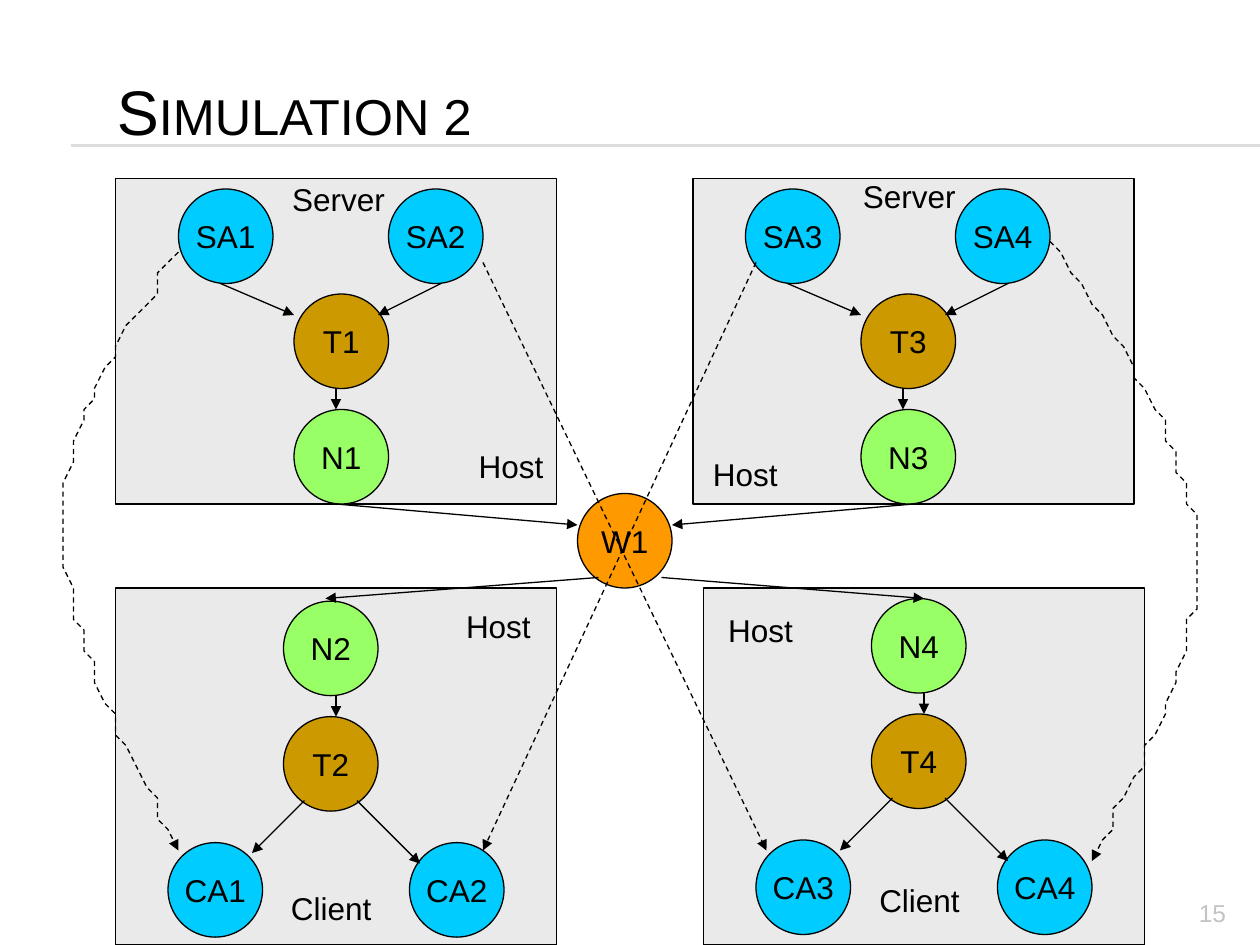
from lxml.etree import SubElement
from pptx import Presentation
from pptx.dml.color import RGBColor
from pptx.enum.dml import MSO_LINE
from pptx.enum.shapes import MSO_CONNECTOR, MSO_SHAPE
from pptx.enum.text import MSO_ANCHOR, PP_ALIGN
from pptx.oxml.ns import qn
from pptx.util import Inches, Pt

FONT = "Arial"
BLACK, PANEL, RULE, PALE = "000000", "EAEAEA", "DDDDDD", "C3C3C3"
BLUE, BROWN, GREEN, ORANGE = "00CCFF", "CC9900", "99FF66", "FF9900"

# Diagram lengths are in grid units, twelve to the inch.
UNIT = 1 / 12
NODE = 9
PANELS = [(11, 56, 42, 34), (66, 17, 42, 31), (67, 56, 42, 34), (11, 17, 42, 31)]

# Each tree is drawn once per offset: (dx, dy, node names).
SERVER = {
    "nodes": [(17, 18, BLUE), (37, 18, BLUE), (28, 28, BROWN), (28, 39, GREEN)],
    "arrows": [(21, 27, 28, 30), (42, 27, 36, 30), (32, 37, 32, 39)],
    "copies": [(0, 0, ["SA1", "SA2", "T1", "N1"]),
               (54, 0, ["SA3", "SA4", "T3", "N3"])],
}
CLIENT = {
    "nodes": [(27, 57, GREEN), (27, 68, BROWN), (16, 80, BLUE), (39, 80, BLUE)],
    "arrows": [(32, 66, 32, 68), (29, 76, 24, 81), (34, 76, 40, 82)],
    "copies": [(0, 0.25, ["N2", "T2", "CA1", "CA2"]),
               (56, 0, ["N4", "T4", "CA3", "CA4"])],
}
HUB = ("W1", 55, 47, ORANGE)
HUB_ARROWS = [(32, 48, 55, 50), (57, 55, 31, 57), (87, 48, 64, 50), (63, 55, 88, 57)]
DASHED_ARROWS = [(46, 25, 73, 81), (72, 25, 46, 81)]
# Bezier chains: a start point, then two controls and an end per segment.
DASHED_CURVES = [
    [(17, 24), (11.5, 32.25), (6, 40.5), (6, 50),
     (6, 59.5), (11.5, 70.25), (17, 81)],
    [(100, 23), (106.67, 32.67), (113.33, 42.17), (114, 52),
     (114.67, 61.83), (109.33, 71.83), (104, 82)],
]
# Labels: text, left, top, width in inches
LABELS = [
    ("Host", 3.6, 4.77, 0.72), ("Host", 3.7, 3.5, 0.72),
    ("Host", 5.56, 3.56, 0.72), ("Host", 5.68, 4.8, 0.72),
    ("Server", 2.22, 1.38, 0.95), ("Server", 6.75, 1.36, 0.95),
    ("Client", 6.88, 6.94, 0.85), ("Client", 2.21, 7.01, 0.85),
]


def rgb(color):
    return RGBColor.from_string(color)


def grid(*lengths):
    return [Inches(length * UNIT) for length in lengths]


def write(shape, text, size=18, color=BLACK, align=PP_ALIGN.LEFT,
          anchor=MSO_ANCHOR.TOP, wrap=False):
    frame = shape.text_frame
    frame.word_wrap = wrap
    frame.vertical_anchor = anchor
    para = frame.paragraphs[0]
    para.text = text
    para.alignment = align
    para.font.name = FONT
    para.font.size = Pt(size)
    para.font.color.rgb = rgb(color)
    return para


def add_text(page, text, left, top, width, height, **style):
    box = page.shapes.add_textbox(*map(Inches, (left, top, width, height)))
    return write(box, text, **style)


def add_solid(page, kind, place, fill):
    shape = page.shapes.add_shape(kind, *grid(*place))
    shape.shadow.inherit = False
    shape.fill.solid()
    shape.fill.fore_color.rgb = rgb(fill)
    shape.line.color.rgb = rgb(BLACK)
    shape.line.width = Pt(0.75)
    return shape


def add_node(page, name, left, top, fill):
    node = add_solid(page, MSO_SHAPE.OVAL, (left, top, NODE, NODE), fill)
    write(node, name, align=PP_ALIGN.CENTER, anchor=MSO_ANCHOR.MIDDLE)


def style_line(shape, color=BLACK, dashed=False, arrow=True):
    shape.line.color.rgb = rgb(color)
    shape.line.width = Pt(0.75)
    if dashed:
        shape.line.dash_style = MSO_LINE.DASH
    if arrow:
        SubElement(shape.line._get_or_add_ln(), qn("a:tailEnd"), type="triangle")


def add_line(page, ends, **style):
    line = page.shapes.add_connector(MSO_CONNECTOR.STRAIGHT, *ends)
    style_line(line, **style)
    SubElement(line._element.spPr, qn("a:effectLst"))


def bezier(points, t):
    """Point at share t of one cubic segment."""
    weights = ((1 - t) ** 3, 3 * t * (1 - t) ** 2, 3 * t ** 2 * (1 - t), t ** 3)
    return tuple(sum(w * p[axis] for w, p in zip(weights, points)) for axis in (0, 1))


def add_curve(page, chain, steps=20):
    points = [bezier(chain[first:first + 4], step / steps)
              for first in range(0, len(chain) - 1, 3)
              for step in range(1, steps + 1)]
    builder = page.shapes.build_freeform(*chain[0], scale=Inches(UNIT))
    builder.add_line_segments(points, close=False)
    curve = builder.convert_to_shape()
    curve.shadow.inherit = False
    curve.fill.background()
    style_line(curve, dashed=True)


def add_tree(page, tree):
    for dx, dy, names in tree["copies"]:
        for name, (left, top, fill) in zip(names, tree["nodes"]):
            add_node(page, name, left + dx, top + dy, fill)
        for x1, y1, x2, y2 in tree["arrows"]:
            add_line(page, grid(x1 + dx, y1 + dy, x2 + dx, y2 + dy))


def main():
    deck = Presentation()
    deck.slide_width, deck.slide_height = Inches(10), Inches(7.5)
    page = deck.slides.add_slide(deck.slide_layouts[6])

    for y in (1.15, 1.16):
        add_line(page, map(Inches, (0.56, y, 10, y)), color=RULE, arrow=False)
    add_text(page, "15", 9, 7.08, 0.83, 0.27, size=14, color=PALE,
             align=PP_ALIGN.RIGHT, wrap=True)
    title = add_text(page, "Simulation 2", 0.83, 0.25, 8.5, 1.25, size=36,
                     anchor=MSO_ANCHOR.MIDDLE, wrap=True)
    title.runs[0].font._element.set("cap", "small")

    for place in PANELS:
        add_solid(page, MSO_SHAPE.RECTANGLE, place, PANEL)
    add_tree(page, SERVER)
    add_tree(page, CLIENT)
    add_node(page, *HUB)
    for ends in HUB_ARROWS:
        add_line(page, grid(*ends))
    for ends in DASHED_ARROWS:
        add_line(page, grid(*ends), dashed=True)
    for chain in DASHED_CURVES:
        add_curve(page, chain)
    for text, left, top, width in LABELS:
        add_text(page, text, left, top, width, 0.4)

    deck.save("out.pptx")


if __name__ == "__main__":
    main()
